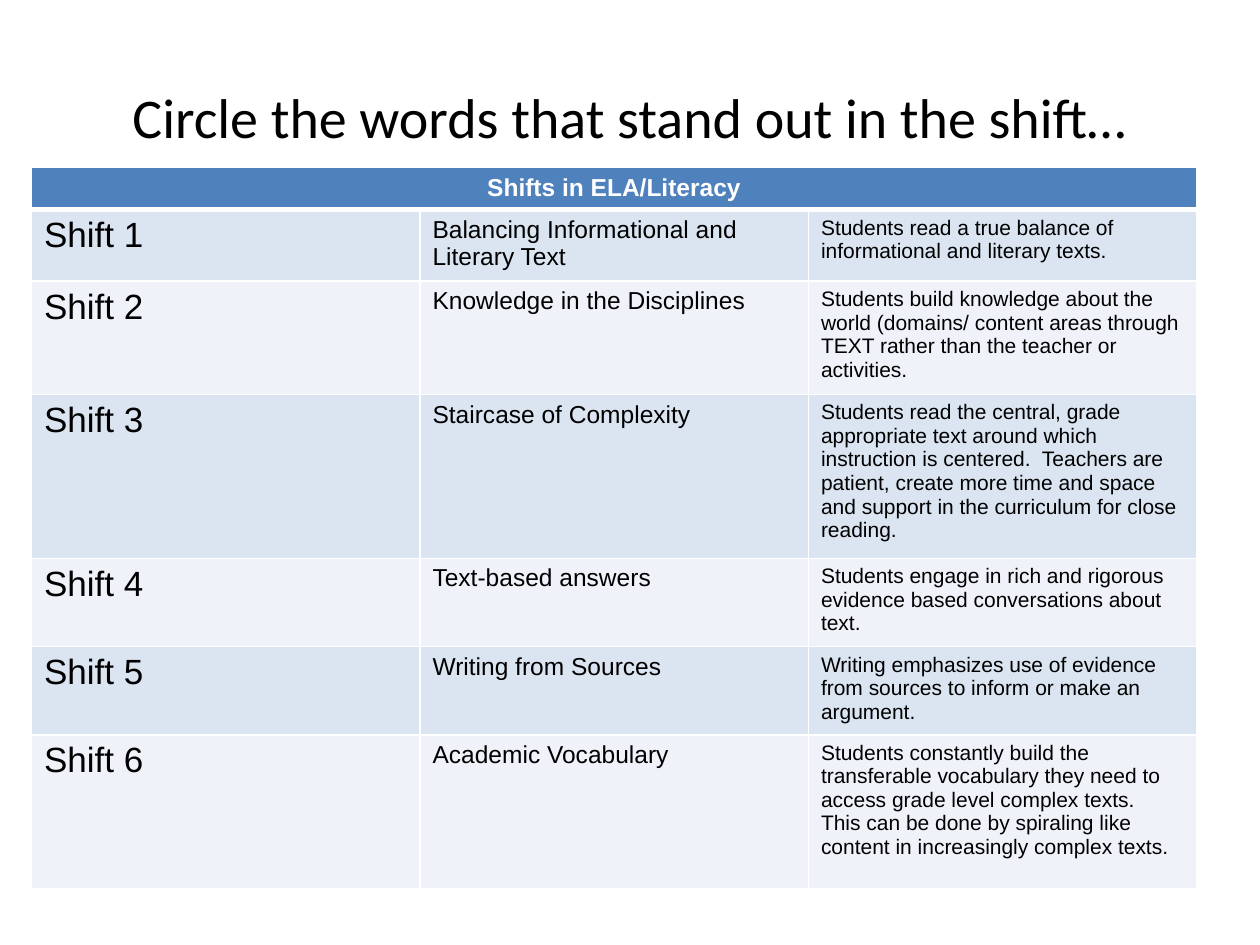
"""Build a slide with a table of the six shifts in ELA/Literacy."""
from lxml.etree import SubElement
from pptx import Presentation
from pptx.dml.color import RGBColor
from pptx.enum.text import MSO_ANCHOR as Anchor, PP_ALIGN as Align
from pptx.oxml.ns import qn
from pptx.util import Inches, Pt

TITLE = "Circle the words that stand out in the shift…"
HEADING = "Shifts in ELA/Literacy"
SHIFTS = [
    ("Balancing Informational and Literary Text",
     "Students read a true balance of informational and literary texts."),
    ("Knowledge in the Disciplines",
     "Students build knowledge about the world (domains/ content areas through "
     "TEXT rather than the teacher or activities."),
    ("Staircase of Complexity",
     "Students read the central, grade appropriate text around which instruction "
     "is centered.  Teachers are patient, create more time and space and support "
     "in the curriculum for close reading."),
    ("Text-based answers",
     "Students engage in rich and rigorous evidence based conversations about text."),
    ("Writing from Sources",
     "Writing emphasizes use of evidence from sources to inform or make an argument."),
    ("Academic Vocabulary",
     "Students constantly build the transferable vocabulary they need to access "
     "grade level complex texts.  This can be done by spiraling like content in "
     "increasingly complex texts."),
]
COLUMN_SIZES = (20, 14, 12)
TABLE_WIDTH, FRAME_HEIGHT = 9.25, 3.28
ROW_HEIGHTS = (0.32, 0.51, 0.84, 1.22, 0.65, 0.65, 1.22)
BLACK, WHITE, BLUE = "000000", "FFFFFF", "4F81BD"
BANDS = ("DBE5F1", "EFF3F9")


def color(value):
    return RGBColor.from_string(value)


def write(frame, text, size, font="Arial", fill=BLACK, bold=False, align=Align.LEFT):
    paragraph = frame.paragraphs[0]
    paragraph.alignment = align
    run = paragraph.add_run()
    run.text = text
    run.font.size, run.font.name, run.font.bold = Pt(size), font, bold
    run.font.color.rgb = color(fill)


def paint(cell, fill, bottom=1):
    properties = cell._tc.get_or_add_tcPr()
    for side, width in (("L", 1), ("R", 1), ("T", 1), ("B", bottom)):
        line = SubElement(properties, qn(f"a:ln{side}"), w=str(Pt(width)))
        solid = SubElement(line, qn("a:solidFill"))
        SubElement(solid, qn("a:srgbClr"), val=WHITE)
    cell.fill.solid()
    cell.fill.fore_color.rgb = color(fill)


def add_title(slide):
    frame = slide.shapes.add_textbox(
        Inches(0.5), Inches(0.3), Inches(9), Inches(1.25)).text_frame
    frame.word_wrap = True
    frame.vertical_anchor = Anchor.MIDDLE
    write(frame, TITLE, 32, font="Calibri", align=Align.CENTER)


def add_shifts(slide):
    columns = len(COLUMN_SIZES)
    holder = slide.shapes.add_table(
        len(ROW_HEIGHTS), columns, Inches(0.25), Inches(1.33),
        Inches(TABLE_WIDTH), Inches(FRAME_HEIGHT))
    table = holder.table
    for row, height in zip(table.rows, ROW_HEIGHTS):
        row.height = Inches(height)
    holder.height = Inches(FRAME_HEIGHT)

    for column in range(columns):
        paint(table.cell(0, column), BLUE, bottom=3)
    heading = table.cell(0, 0)
    heading.merge(table.cell(0, columns - 1))
    write(heading.text_frame, HEADING, 14, fill=WHITE, bold=True, align=Align.CENTER)

    for number, shift in enumerate(SHIFTS, 1):
        texts = (f"Shift {number}", *shift)
        for column, (text, size) in enumerate(zip(texts, COLUMN_SIZES)):
            cell = table.cell(number, column)
            paint(cell, BANDS[(number - 1) % 2])
            write(cell.text_frame, text, size)


def main():
    deck = Presentation()
    deck.slide_width, deck.slide_height = Inches(10), Inches(7.5)
    slide = deck.slides.add_slide(deck.slide_layouts[6])
    add_title(slide)
    add_shifts(slide)
    deck.save("out.pptx")


if __name__ == "__main__":
    main()
